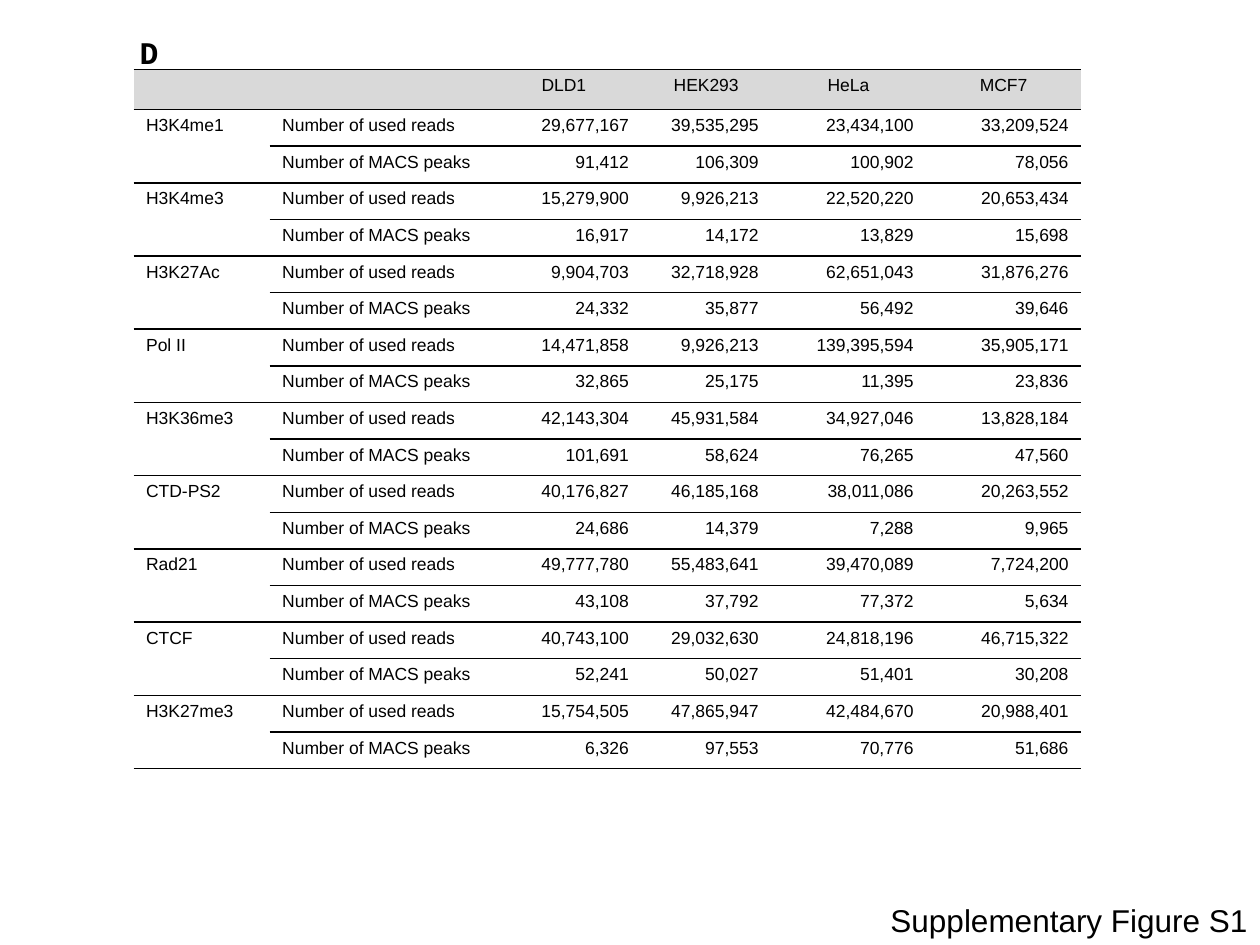
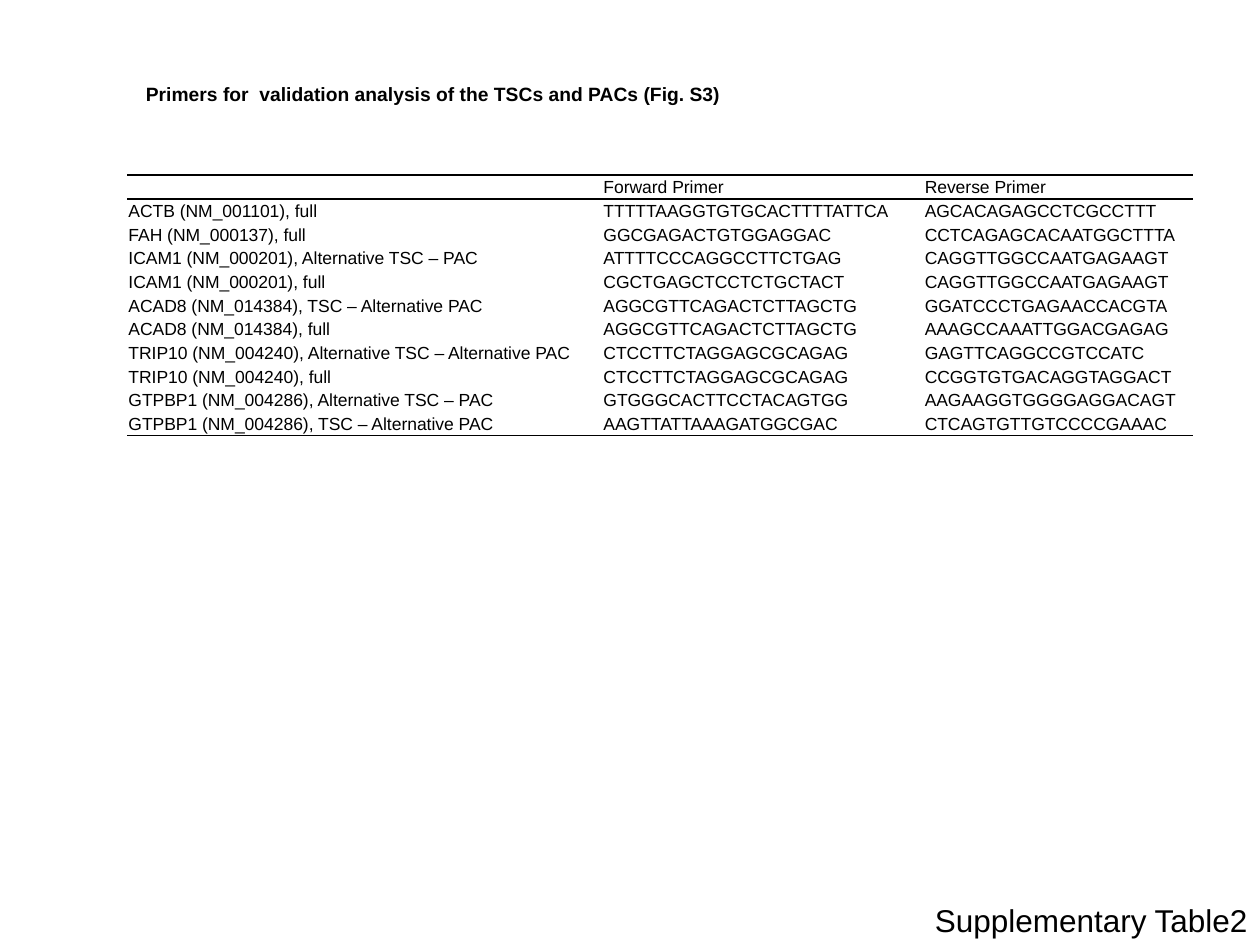
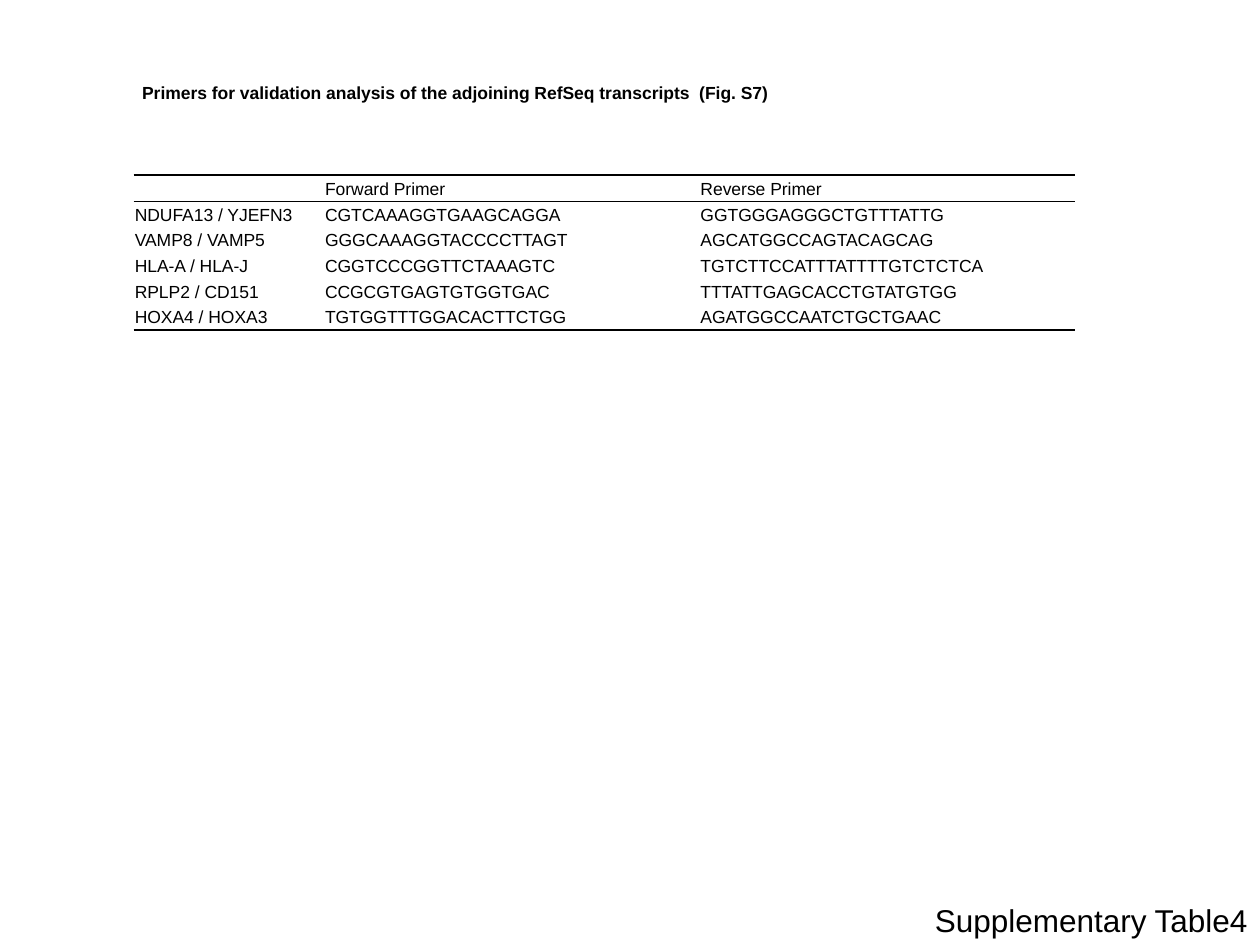
from pptx import Presentation, util as u
from pptx.dml.color import RGBColor
from pptx.enum import text
from pptx.oxml import parse_xml
from pptx.oxml.ns import nsdecls

BLACK, GREY = "000000", "D9D9D9"
FONT, MONO = "Arial", "Courier New"
LEFT, CENTER, RIGHT = text.PP_ALIGN.LEFT, text.PP_ALIGN.CENTER, text.PP_ALIGN.RIGHT
TIGHT = {"margin_left": 0.01, "margin_top": 0.01, "margin_right": 0.01, "margin_bottom": 0}

CELL_LINES = ["DLD1", "HEK293", "HeLa", "MCF7"]
MEASURES = ["Number of used reads", "Number of MACS peaks"]
# mark: used reads per cell line, then peaks per cell line
CHIP_SEQ = {
    "H3K4me1": [[29677167, 39535295, 23434100, 33209524], [91412, 106309, 100902, 78056]],
    "H3K4me3": [[15279900, 9926213, 22520220, 20653434], [16917, 14172, 13829, 15698]],
    "H3K27Ac": [[9904703, 32718928, 62651043, 31876276], [24332, 35877, 56492, 39646]],
    "Pol II": [[14471858, 9926213, 139395594, 35905171], [32865, 25175, 11395, 23836]],
    "H3K36me3": [[42143304, 45931584, 34927046, 13828184], [101691, 58624, 76265, 47560]],
    "CTD-PS2": [[40176827, 46185168, 38011086, 20263552], [24686, 14379, 7288, 9965]],
    "Rad21": [[49777780, 55483641, 39470089, 7724200], [43108, 37792, 77372, 5634]],
    "CTCF": [[40743100, 29032630, 24818196, 46715322], [52241, 50027, 51401, 30208]],
    "H3K27me3": [[15754505, 47865947, 42484670, 20988401], [6326, 97553, 70776, 51686]],
}

PRIMER_HEADER = ("", "Forward Primer", "Reverse Primer")
TSC_PAC_PRIMERS = [
    ("ACTB (NM_001101), full", "TTTTTAAGGTGTGCACTTTTATTCA", "AGCACAGAGCCTCGCCTTT"),
    ("FAH (NM_000137), full", "GGCGAGACTGTGGAGGAC", "CCTCAGAGCACAATGGCTTTA"),
    ("ICAM1 (NM_000201), Alternative TSC – PAC", "ATTTTCCCAGGCCTTCTGAG", "CAGGTTGGCCAATGAGAAGT"),
    ("ICAM1 (NM_000201), full", "CGCTGAGCTCCTCTGCTACT", "CAGGTTGGCCAATGAGAAGT"),
    ("ACAD8 (NM_014384), TSC – Alternative PAC", "AGGCGTTCAGACTCTTAGCTG", "GGATCCCTGAGAACCACGTA"),
    ("ACAD8 (NM_014384), full", "AGGCGTTCAGACTCTTAGCTG", "AAAGCCAAATTGGACGAGAG"),
    ("TRIP10 (NM_004240), Alternative TSC – Alternative PAC", "CTCCTTCTAGGAGCGCAGAG",
     "GAGTTCAGGCCGTCCATC"),
    ("TRIP10 (NM_004240), full", "CTCCTTCTAGGAGCGCAGAG", "CCGGTGTGACAGGTAGGACT"),
    ("GTPBP1 (NM_004286), Alternative TSC – PAC", "GTGGGCACTTCCTACAGTGG", "AAGAAGGTGGGGAGGACAGT"),
    ("GTPBP1 (NM_004286), TSC – Alternative PAC", "AAGTTATTAAAGATGGCGAC", "CTCAGTGTTGTCCCCGAAAC"),
]
REFSEQ_PRIMERS = [
    ("NDUFA13 / YJEFN3", "CGTCAAAGGTGAAGCAGGA", "GGTGGGAGGGCTGTTTATTG"),
    ("VAMP8 / VAMP5", "GGGCAAAGGTACCCCTTAGT", "AGCATGGCCAGTACAGCAG"),
    ("HLA-A / HLA-J", "CGGTCCCGGTTCTAAAGTC", "TGTCTTCCATTTATTTTGTCTCTCA"),
    ("RPLP2 / CD151", "CCGCGTGAGTGTGGTGAC", "TTTATTGAGCACCTGTATGTGG"),
    ("HOXA4 / HOXA3", "TGTGGTTTGGACACTTCTGG", "AGATGGCCAATCTGCTGAAC"),
]


def rgb(color):
    return RGBColor.from_string(color)


def write(p, words, size, align=LEFT, name=FONT, bold=False):
    p.alignment = align
    if not words:  # the end mark sets the line height of an empty cell
        p._p.append(parse_xml(f'<a:endParaRPr {nsdecls("a")} sz="{size * 100}"/>'))
        return
    r = p.add_run()
    r.text = words
    for key, value in {"size": u.Pt(size), "name": name, "bold": bold}.items():
        setattr(r.font, key, value)
    r.font.color.rgb = rgb(BLACK)


def add_text(s, at, words, size, **style):
    tf = s.shapes.add_textbox(*map(u.Inches, at)).text_frame
    tf.word_wrap = True
    write(tf.paragraphs[0], words, size, **style)


def add_label(s, words):
    """Large label in the bottom right corner."""
    add_text(s, (5.85, 7.1, 4.15, 0.4), words, 18, align=RIGHT)


def set_borders(cell, top=0, bottom=0):
    """Rule the cell above and below, widths in points; the other sides stay bare."""
    sides = {"lnL": 0, "lnR": 0, "lnT": top, "lnB": bottom}
    for i, (tag, width) in enumerate(sides.items()):
        paint = f'<a:solidFill><a:srgbClr val="{BLACK}"/></a:solidFill>' if width else "<a:noFill/>"
        ln = f'<a:{tag} {nsdecls("a")} w="{u.Pt(width)}">{paint}</a:{tag}>'
        cell._tc.get_or_add_tcPr().insert(i, parse_xml(ln))


def add_table(s, at, widths, header_height, rows, rules, aligns, header_align=LEFT,
              header_fill=None, margins=None, anchor=text.MSO_ANCHOR.TOP):
    """Fill a table; rules[i] is the width of the line above row i, the last one closes it."""
    table = s.shapes.add_table(len(rows), len(widths), *map(u.Inches, at)).table
    table.first_row = table.horz_banding = False
    for column, width in zip(table.columns, widths):
        column.width = u.Inches(width)
    body_height = (at[3] - header_height) / (len(rows) - 1)
    for i, row in enumerate(rows):
        table.rows[i].height = u.Inches(body_height if i else header_height)
        for j, words in enumerate(row):
            cell = table.cell(i, j)
            cell.vertical_anchor = anchor
            for key, value in (margins or {}).items():
                setattr(cell, key, u.Inches(value))
            write(cell.text_frame.paragraphs[0], words, 10, aligns[j] if i else header_align)
            if header_fill and i == 0:
                cell.fill.solid()
                cell.fill.fore_color.rgb = rgb(header_fill)
            else:
                cell.fill.background()
            set_borders(cell, rules[i], rules[i + 1])
    return table


def add_reads_slide(s):
    add_label(s, "Supplementary Figure S1")
    add_text(s, (1.01, 0.21, 0.54, 0.4), "D", 18, name=MONO, bold=True)
    rows = [["", "", *CELL_LINES]]
    for mark, counts in CHIP_SEQ.items():
        for name, measure, values in zip((mark, ""), MEASURES, counts):
            rows.append([name, measure, *(f"{v:,}" for v in values)])
    rules = [0.25] + [1] * (len(rows) - 1) + [0.5]
    table = add_table(s, (1.06, 0.55, 7.53, 5.55), (1.08, 1.72, 1.23, 1.03, 1.23, 1.23), 0.32,
                      rows, rules, [LEFT] * 2 + [RIGHT] * 4, CENTER, GREY)
    for i in range(1, len(rows), 2):
        table.cell(i, 0).merge(table.cell(i + 1, 0))


def add_primer_slide(s, label, title, title_at, title_size, at, widths, header_height, primers):
    add_text(s, title_at, title, title_size, bold=True)
    rules = [1, 1] + [0] * (len(primers) - 1) + [1]
    add_table(s, at, widths, header_height, [PRIMER_HEADER, *primers], rules, [LEFT] * 3,
              margins=TIGHT, anchor=text.MSO_ANCHOR.MIDDLE)
    add_label(s, label)


def main():
    prs = Presentation()
    prs.slide_width, prs.slide_height = u.Inches(10), u.Inches(7.5)
    reads, tsc_pac, refseq = (prs.slides.add_slide(prs.slide_layouts[6]) for _ in range(3))
    add_reads_slide(reads)
    add_primer_slide(tsc_pac, "Supplementary Table2",
                     "Primers for  validation analysis of the TSCs and PACs (Fig. S3)",
                     (1.06, 0.6, 8.4, 0.29), 11,
                     (1.01, 1.39, 8.47, 2.07), (3.77, 2.55, 2.14), 0.19, TSC_PAC_PRIMERS)
    add_primer_slide(refseq, "Supplementary Table4",
                     "Primers for validation analysis of the adjoining RefSeq transcripts  (Fig. S7)",
                     (1.03, 0.6, 8.4, 0.27), 10,
                     (1.06, 1.39, 7.48, 1.23), (1.51, 2.98, 2.98), 0.21, REFSEQ_PRIMERS)
    prs.save("out.pptx")


if __name__ == "__main__":
    main()
